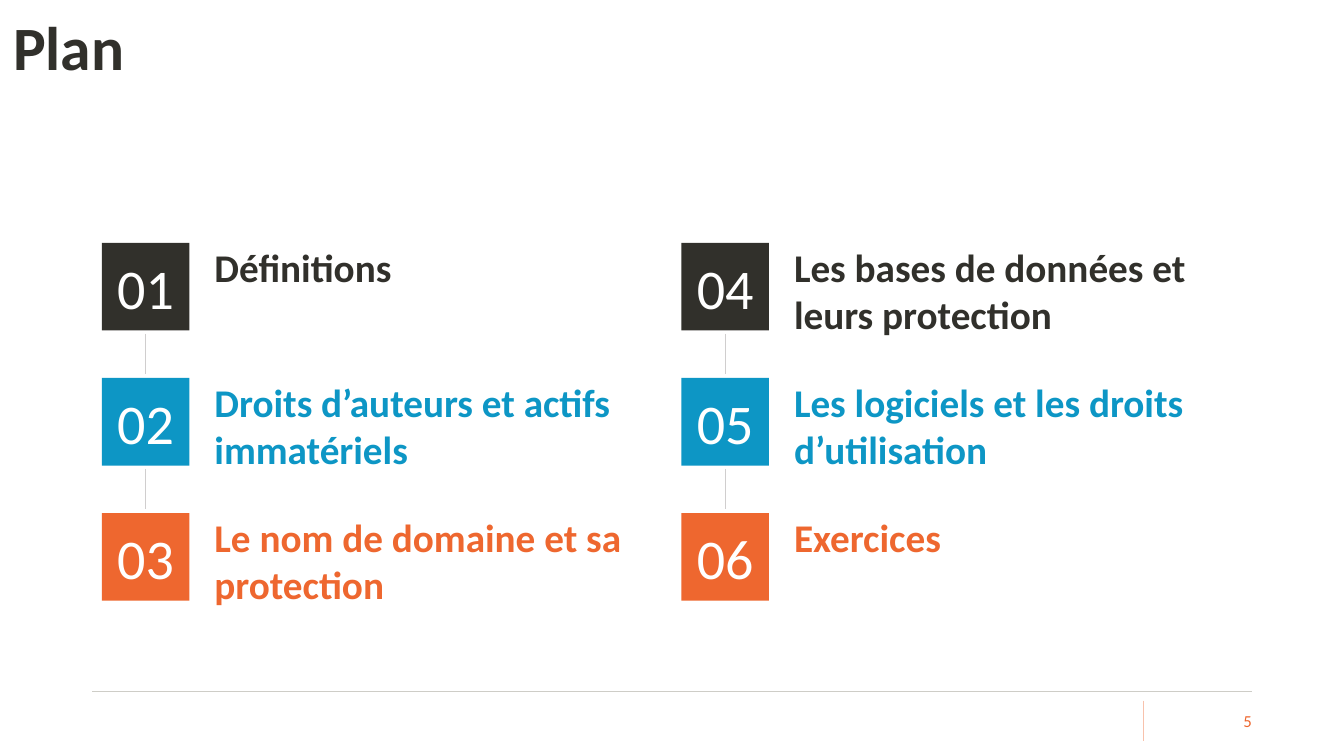
from lxml import etree
from pptx import Presentation
from pptx.dml.color import RGBColor
from pptx.enum import shapes, text
from pptx.oxml import ns
from pptx.util import Pt

TITLE = "Plan"
PAGE = "5"
COLUMNS = [
    ["Définitions",
     "Droits d’auteurs et actifs immatériels",
     "Le nom de domaine et sa protection"],
    ["Les bases de données et leurs protection",
     "Les logiciels et les droits d’utilisation",
     "Exercices"],
]

THEME = {
    "font": "Calibri",
    "ink": "31302B", "white": "FFFFFF", "accent": "EE672F",
    "rows": ["31302B", "0D96C5", "EE672F"],
    "link": "D0CECE", "rule": "CECDC7", "tick": "F8C2AC",
    "title": 44, "number": 40, "topic": 28, "page": 12,
}

LEFT, TOP = 72.7, 173.5     # first badge
STEP_X, STEP_Y = 414, 96.5  # distance between columns, rows
BADGE = 62.6
TOPIC_DX, TOPIC_W, LINE_H = 73.4, 332, 34
LINK_GAP, LINK_LEN = 2.4, 28.8


def color(name):
    return RGBColor.from_string(THEME.get(name, name))


def write(shape, words, size, hue, bold=False, align="LEFT",
          anchor="MIDDLE", inset=(7.2, 3.6, 7.2, 3.6)):
    frame = shape.text_frame
    frame.text = words
    frame.word_wrap = True
    frame.vertical_anchor = getattr(text.MSO_ANCHOR, anchor)
    (frame.margin_left, frame.margin_top,
     frame.margin_right, frame.margin_bottom) = map(Pt, inset)
    para = frame.paragraphs[0]
    para.alignment = getattr(text.PP_ALIGN, align)
    font = para.runs[0].font
    font.name, font.size, font.bold = THEME["font"], Pt(THEME[size]), bold
    font.color.rgb = color(hue)
    return frame


def label(slide, box, words, size, hue, **style):
    return write(slide.shapes.add_textbox(*map(Pt, box)), words, size, hue, **style)


def line(slide, x1, y1, x2, y2, hue):
    rule = slide.shapes.add_connector(
        shapes.MSO_CONNECTOR.STRAIGHT, *map(Pt, (x1, y1, x2, y2)))
    rule.line.color.rgb = color(hue)
    rule.line.width = Pt(0.5)
    etree.SubElement(rule._element.spPr, ns.qn("a:effectLst"))


def badge(slide, x, y, number, hue):
    square = slide.shapes.add_shape(
        shapes.MSO_SHAPE.RECTANGLE, *map(Pt, (x, y, BADGE, BADGE)))
    square.shadow.inherit = False
    square.fill.solid()
    square.fill.fore_color.rgb = color(hue)
    square.line.fill.background()
    write(square, f"{number:02}", "number", "white", align="CENTER")


def agenda(slide):
    for col, topics in enumerate(COLUMNS):
        x = LEFT + col * STEP_X
        mid = x + BADGE / 2
        for row, topic in enumerate(topics):
            y = TOP + row * STEP_Y
            hue = THEME["rows"][row]
            label(slide, (x + TOPIC_DX, y, TOPIC_W, 2 * LINE_H), topic, "topic",
                  hue, bold=True, anchor="TOP", inset=(7.2, 0, 7.2, 0))
            badge(slide, x, y, col * len(topics) + row + 1, hue)
            if row < len(topics) - 1:
                start = y + BADGE + LINK_GAP
                line(slide, mid, start, mid, start + LINK_LEN, "link")


def main():
    deck = Presentation()
    deck.slide_width, deck.slide_height = Pt(960), Pt(540)
    slide = deck.slides.add_slide(deck.slide_layouts[6])
    line(slide, 66, 493.8, 894, 493.8, "rule")
    line(slide, 817, 500.4, 817, 529.2, "tick")
    agenda(slide)
    head = label(slide, (9.4, 5, 753.8, 62.6), TITLE, "title", "ink",
                 bold=True, inset=(0, 3.6, 7.2, 3.6))
    head.paragraphs[0].line_spacing = 0.9
    label(slide, (825.8, 500.4, 68.4, 28.8), PAGE, "page", "accent",
          align="RIGHT", inset=(0, 3.6, 0, 3.6))
    deck.save("out.pptx")


if __name__ == "__main__":
    main()
